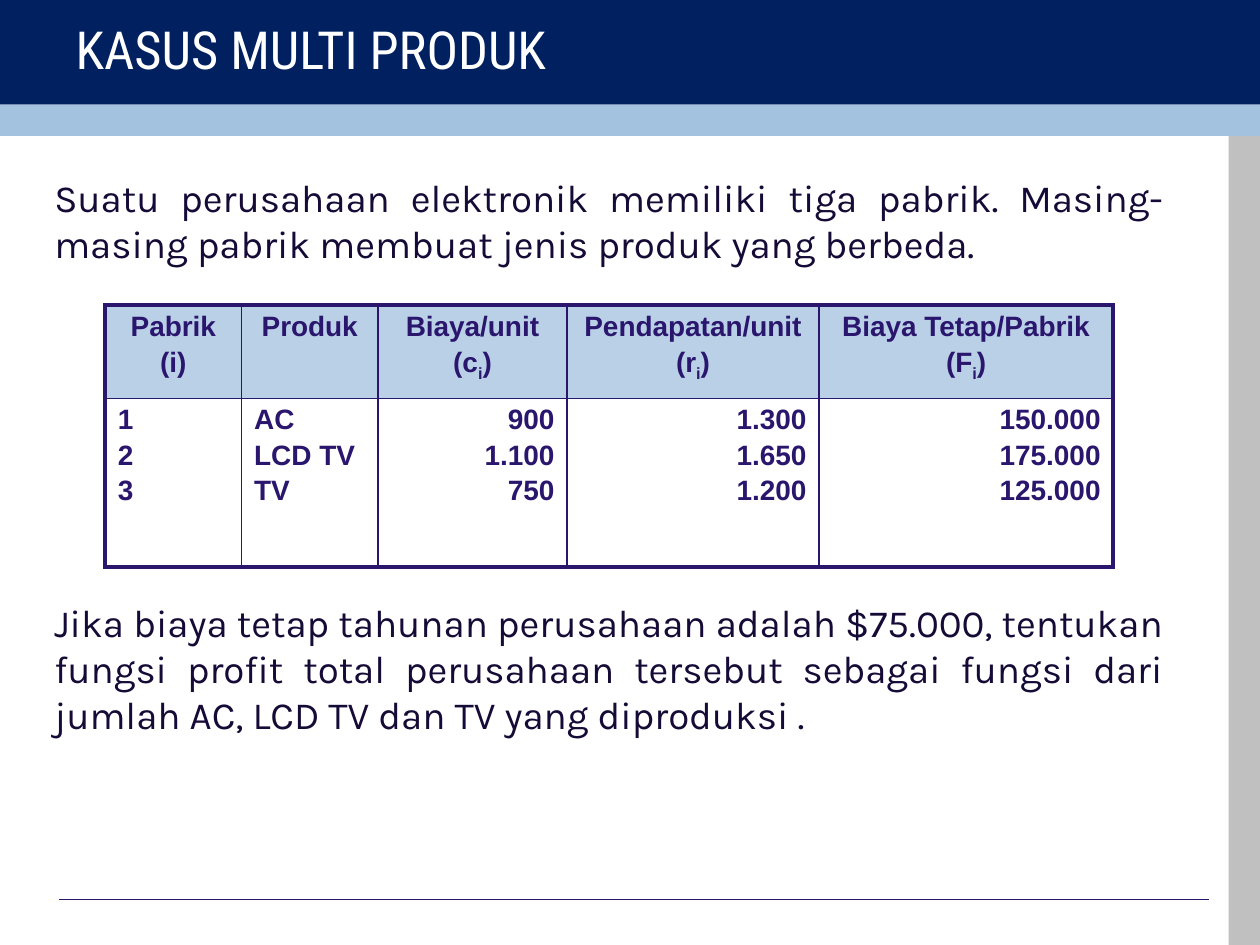
from lxml import etree
from pptx import Presentation
from pptx.dml.color import RGBColor
from pptx.enum.shapes import MSO_CONNECTOR, MSO_SHAPE
from pptx.enum.text import MSO_ANCHOR, MSO_AUTO_SIZE, PP_ALIGN
from pptx.oxml.ns import qn
from pptx.util import Cm, Pt

LEFT, CENTER, RIGHT, JUSTIFY = PP_ALIGN.LEFT, PP_ALIGN.CENTER, PP_ALIGN.RIGHT, PP_ALIGN.JUSTIFY
COLORS = {
    "navy": "002060",
    "sky": "A3C2E0",
    "silver": "C0C0C0",
    "violet": "2B166E",
    "ink": "160B37",
    "header": "75A3D1",
    "white": "FFFFFF",
}
COLUMNS = [
    (2.75, LEFT, ["Pabrik", "(i)"], ["1", "2", "3"]),
    (2.75, LEFT, ["Produk"], ["AC", "LCD TV", "TV"]),
    (3.81, RIGHT, ["Biaya/unit", "(c_i)"], ["900", "1.100", "750"]),
    (5.08, RIGHT, ["Pendapatan/unit", "(r_i)"], ["1.300", "1.650", "1.200"]),
    (5.93, RIGHT, ["Biaya Tetap/Pabrik", "(F_i)"], ["150.000", "175.000", "125.000"]),
]
ROW_HEIGHTS = [1.88, 3.4]
QUESTION = [
    "Suatu perusahaan elektronik memiliki tiga pabrik. Masing-masing pabrik membuat "
    "jenis produk yang berbeda.",
    "Jika biaya tetap tahunan perusahaan adalah $75.000, tentukan fungsi profit total "
    "perusahaan tersebut sebagai fungsi dari jumlah AC, LCD TV dan TV yang diproduksi .",
]


def rgb(name):
    """Return the named colour."""
    return RGBColor.from_string(COLORS[name])


def style_font(font, family, size, color, bold=False):
    """Set the face, size, colour and weight of a font."""
    font.name, font.size, font.bold = family, Pt(size), bold
    font.color.rgb = rgb(color)


def place(shape, left, top, width, height):
    """Move a shape to a box given in centimetres."""
    shape.left, shape.top = Cm(left), Cm(top)
    shape.width, shape.height = Cm(width), Cm(height)


def add_band(page, color, left, top, width, height):
    """Add a plain filled rectangle."""
    band = page.shapes.add_shape(MSO_SHAPE.RECTANGLE, Cm(left), Cm(top), Cm(width), Cm(height))
    band.shadow.inherit = False
    band.fill.solid()
    band.fill.fore_color.rgb = rgb(color)
    band.line.fill.background()


def add_frame(page, left, top, width, height):
    """Draw the side bar, footer rule and header bands within a box."""
    add_band(page, "silver", left + width - 0.63, top + 2.73, 0.63, height - 2.73)
    rule_y = Cm(top + height - 0.92)
    rule = page.shapes.add_connector(
        MSO_CONNECTOR.STRAIGHT, Cm(left + 1.19), rule_y, Cm(left + width - 1.02), rule_y)
    rule.line.color.rgb = rgb("violet")
    rule.line.width = Pt(0.75)
    etree.SubElement(rule._element.spPr, qn("a:effectLst"))
    add_band(page, "navy", left, top, width, 2.11)
    add_band(page, "sky", left, top + 2.11, width, 0.63)


def fill_title(page, left, top, width, height):
    """Place and format the title in front of the header band."""
    title = page.shapes.title
    place(title, left, top, width, height)
    page.shapes._spTree.append(title._element)
    frame = title.text_frame
    frame.text = "KASUS MULTI PRODUK"
    frame.auto_size = MSO_AUTO_SIZE.NONE
    frame.vertical_anchor = MSO_ANCHOR.MIDDLE
    para = frame.paragraphs[0]
    para.alignment = LEFT
    style_font(para.runs[0].font, "Roboto Condensed", 30, "white")


def fill_body(page, left, top, width, height):
    """Place the two question paragraphs above and below the table."""
    body = page.placeholders[1]
    place(body, left, top, width, height)
    page.shapes._spTree.append(body._element)
    frame = body.text_frame
    frame.text = "\n".join(QUESTION)
    frame.auto_size = MSO_AUTO_SIZE.NONE
    for para, gap in zip(frame.paragraphs, (0, 190)):
        para.alignment = JUSTIFY
        para.space_before = Pt(gap)
        properties = para._p.get_or_add_pPr()
        properties.set("marL", "0")
        properties.set("indent", "0")
        etree.SubElement(properties, qn("a:buNone"))
        style_font(para.runs[0].font, "Karla", 22, "ink")


def write_lines(cell, lines, alignment):
    """Write lines in a cell, lowering whatever follows an underscore by one letter."""
    frame = cell.text_frame
    for index, line in enumerate(lines):
        para = frame.add_paragraph() if index else frame.paragraphs[0]
        para.alignment = alignment
        para.space_before = Pt(2.5 if index else 0)
        stem, _, rest = line.partition("_")
        for text, baseline in ((stem, 0), (rest[:1], -25000), (rest[1:], 0)):
            if text:
                span = para.add_run()
                span.text = text
                style_font(span.font, "Arial", 16, "violet", True)
                if baseline:
                    span.font._element.set("baseline", str(baseline))


def set_borders(cell, widths):
    """Give a cell its left, right, top and bottom lines, widths in points."""
    properties = cell._tc.get_or_add_tcPr()
    for index, (side, width) in enumerate(zip("LRTB", widths)):
        line = etree.Element(qn(f"a:ln{side}"), w=str(Pt(width)))
        fill = etree.SubElement(line, qn("a:solidFill"))
        etree.SubElement(fill, qn("a:srgbClr"), val=COLORS["violet"])
        properties.insert(index, line)


def fill_cell(cell, is_header):
    """Tint a header cell and leave a data cell clear."""
    if not is_header:
        cell.fill.background()
        return
    cell.fill.solid()
    cell.fill.fore_color.rgb = rgb("header")
    color = cell._tc.tcPr.find(".//" + qn("a:srgbClr"))
    etree.SubElement(color, qn("a:alpha"), val="50000")


def add_cost_table(page, left, top):
    """Add the table of costs and revenues per factory."""
    width = sum(column[0] for column in COLUMNS)
    table = page.shapes.add_table(
        len(ROW_HEIGHTS), len(COLUMNS), Cm(left), Cm(top), Cm(width), Cm(sum(ROW_HEIGHTS))).table
    table.horz_banding = False
    for row, height in zip(table.rows, ROW_HEIGHTS):
        row.height = Cm(height)
    last = len(COLUMNS) - 1
    for index, (width, alignment, heading, values) in enumerate(COLUMNS):
        table.columns[index].width = Cm(width)
        for row, lines in enumerate((heading, values)):
            cell = table.cell(row, index)
            is_header = row == 0
            write_lines(cell, lines, CENTER if is_header else alignment)
            fill_cell(cell, is_header)
            outer = (index == 0, index == last, is_header, not is_header)
            set_borders(cell, [2.25 if edge else 1 for edge in outer])


def main():
    """Build and save the slide."""
    deck = Presentation()
    deck.slide_width, deck.slide_height = Cm(25.4), Cm(19.05)
    page = deck.slides.add_slide(deck.slide_layouts[1])
    add_frame(page, 0, 0, 25.4, 19.05)
    fill_title(page, 1.27, 0.2, 17.15, 1.57)
    fill_body(page, 0.84, 3.38, 22.86, 13.77)
    add_cost_table(page, 2.12, 6.15)
    deck.save("out.pptx")


if __name__ == "__main__":
    main()
